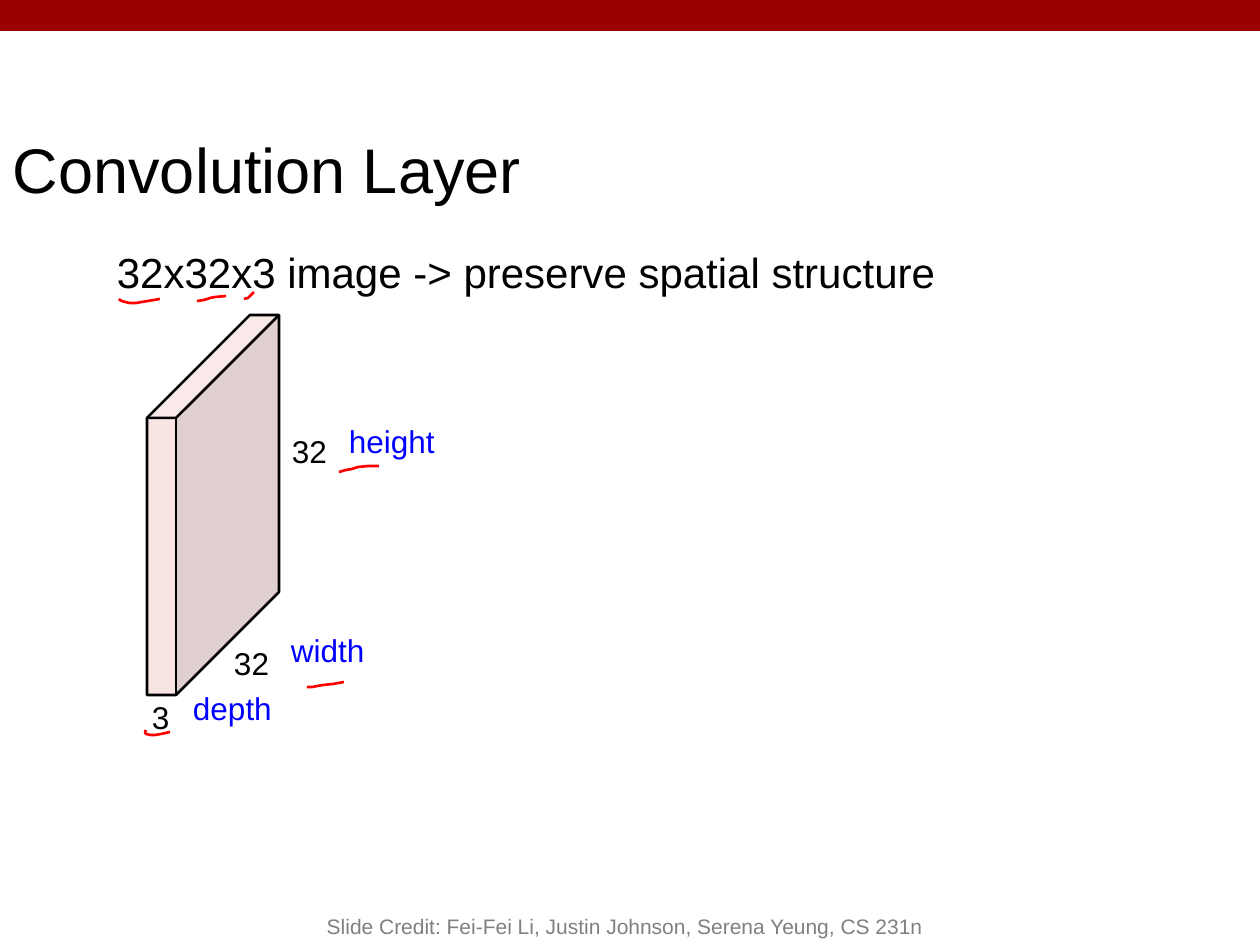
from pptx import Presentation
from pptx.dml.color import RGBColor
from pptx.enum.shapes import MSO_SHAPE
from pptx.enum.text import MSO_ANCHOR, PP_ALIGN
from pptx.oxml.ns import qn
from pptx.util import Pt
from lxml import etree

PX = 914400 // 126  # EMU in one px
RECT, CUBE = MSO_SHAPE.RECTANGLE, MSO_SHAPE.CUBE
BOTTOM, CENTER = MSO_ANCHOR.BOTTOM, PP_ALIGN.CENTER

BLACK = RGBColor(0, 0, 0)
BLUE = RGBColor(0, 0, 255)
RED = RGBColor(255, 0, 0)
MAROON = RGBColor(0x99, 0, 0)
PINK = RGBColor(0xF4, 0xCC, 0xCC)
GRAY = RGBColor(0x80, 0x80, 0x80)

SLIDE = (1260, 945)
BAR = (0, 0, 1260, 31)
VOLUME = (147, 315, 132, 380)
DEPTH_RATIO = 0.78
OPACITY = 52

# words, box in px, size in points, colour
TEXTS = [
    ("Convolution Layer", (0, 118, 1061, 91), 36, BLACK),
    ("32x32x3 image -> preserve spatial structure", (104, 234, 936, 66), 24, BLACK),
    ("32", (221, 631, 68, 43), 18, BLACK),
    ("32", (279, 419, 68, 39), 18, BLACK),
    ("3", (139, 686, 68, 25), 18, BLACK),
    ("width", (278, 626, 278, 18), 18, BLUE),
    ("height", (336, 417, 278, 18), 18, BLUE),
    ("depth", (180, 684, 607, 18), 18, BLUE),
]
CREDIT = ("Slide Credit: Fei-Fei Li, Justin Johnson, Serena Yeung, CS 231n",
          (252, 882, 746, 63), 12, GRAY)

# pen marks under the sizes and their names
MARKS = [
    [(119, 299), (120, 300), (122, 301), (125, 302), (130, 303), (136, 303),
     (142, 302), (148, 301), (154, 300), (160, 299)],
    [(244, 299), (248, 298), (254, 292)],
    [(197, 301), (204, 300), (210, 298), (215, 297), (226, 296)],
    [(146, 730), (145, 732), (146, 734), (151, 735), (155, 735), (161, 734),
     (170, 732)],
    [(339, 472), (346, 470), (352, 469), (358, 467), (368, 466), (379, 466)],
    [(307, 687), (312, 687), (323, 685), (333, 684), (344, 682)],
]


def emu(box):
    return [n * PX for n in box]


def add_block(kind, box, fill):
    block = slide.shapes.add_shape(kind, *emu(box))
    block.shadow.inherit = False
    block.fill.solid()
    block.fill.fore_color.rgb = fill
    block.line.fill.background()
    return block


def add_text(words, box, size, color, inset=13):
    label = slide.shapes.add_textbox(*emu(box))
    frame = label.text_frame
    frame.word_wrap = True
    frame.margin_top = frame.margin_bottom = inset * PX
    frame.margin_left = frame.margin_right = 13 * PX
    frame.text = words
    font = frame.paragraphs[0].runs[0].font
    font.name, font.size = "Arial", Pt(size)
    font.color.rgb = color
    return frame


def set_line(shape, color):
    shape.line.color.rgb = color
    shape.line.width = Pt(1.5)


def add_mark(points):
    pen = slide.shapes.build_freeform(*points[0], scale=PX)
    pen.add_line_segments(points[1:], close=False)
    mark = pen.convert_to_shape()
    mark.shadow.inherit = False
    mark.fill.background()
    set_line(mark, RED)


deck = Presentation()
deck.slide_width, deck.slide_height = emu(SLIDE)
slide = deck.slides.add_slide(deck.slide_layouts[6])

add_block(RECT, BAR, MAROON)
volume = add_block(CUBE, VOLUME, PINK)
volume.adjustments[0] = DEPTH_RATIO
set_line(volume, BLACK)
tint = volume.fill._xPr.find(qn("a:solidFill"))[0]
etree.SubElement(tint, qn("a:alpha"), val=str(OPACITY * 1000))

for text in TEXTS:
    add_text(*text)
credit = add_text(*CREDIT, inset=6)
credit.vertical_anchor = BOTTOM
credit.paragraphs[0].alignment = CENTER

for points in MARKS:
    add_mark(points)

deck.save("out.pptx")
